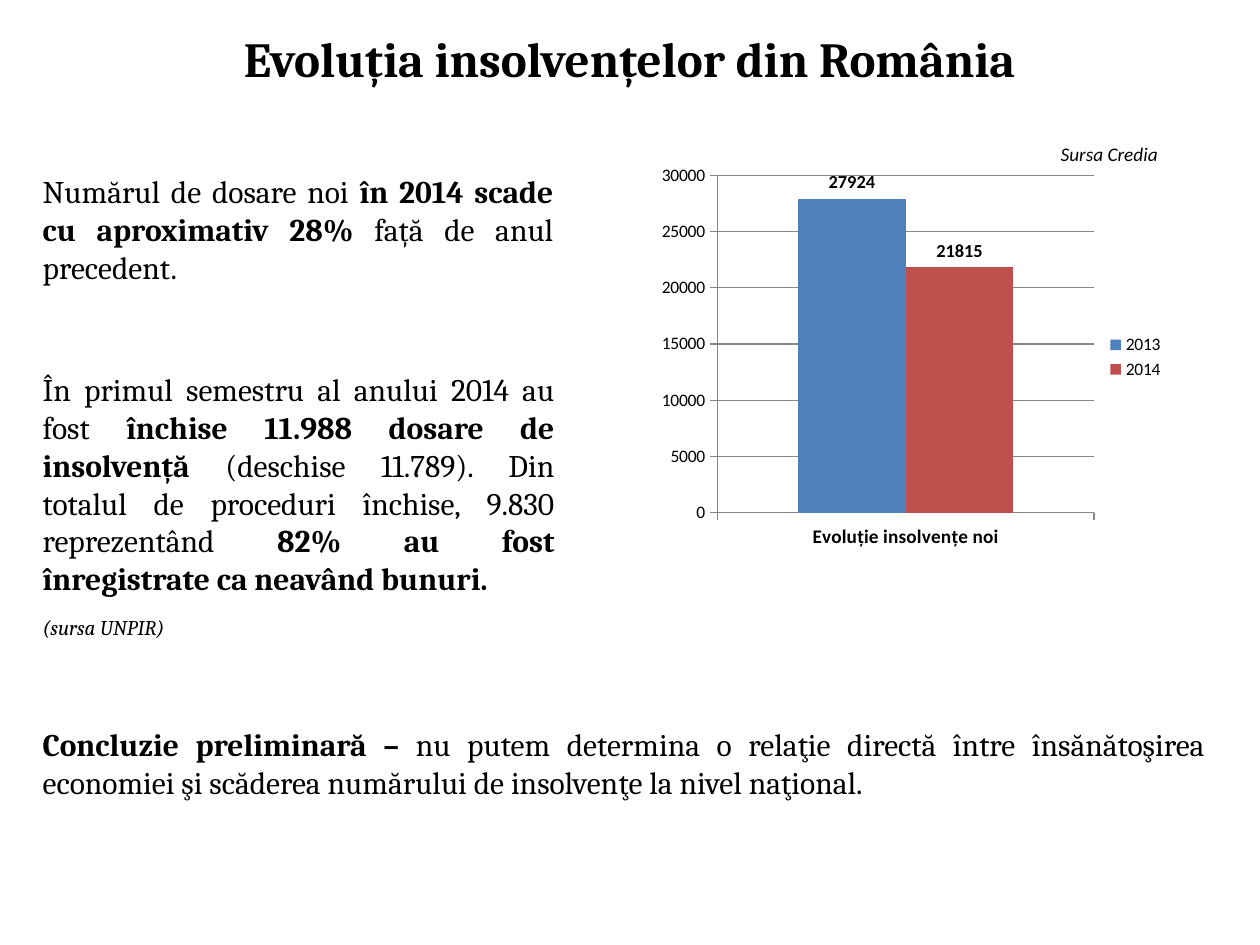
from pptx import Presentation
from pptx.chart.data import CategoryChartData
from pptx.dml.color import RGBColor
from pptx.enum.chart import (XL_CHART_TYPE, XL_LABEL_POSITION,
                             XL_LEGEND_POSITION, XL_TICK_MARK)
from pptx.enum.text import PP_ALIGN
from pptx.util import Pt

BLACK = RGBColor(0, 0, 0)
BLUE = RGBColor(0x4F, 0x81, 0xBD)
RED = RGBColor(0xC0, 0x50, 0x4D)
GRAY = RGBColor(0x86, 0x86, 0x86)
LEFT, MID, RIGHT = PP_ALIGN.JUSTIFY, PP_ALIGN.CENTER, PP_ALIGN.RIGHT
COLUMN = XL_CHART_TYPE.COLUMN_CLUSTERED
ABOVE = XL_LABEL_POSITION.OUTSIDE_END
SIDE = XL_LEGEND_POSITION.RIGHT
OUT = XL_TICK_MARK.OUTSIDE

deck = Presentation()
deck.slide_width, deck.slide_height = Pt(720), Pt(540)
slide = deck.slides.add_slide(deck.slide_layouts[6])


def add_text(frame, text, size=18, font="Cambria", align=LEFT, after=10,
             italic=False, first=True):
    """Write one paragraph; every second part between ** marks is bold."""
    para = frame.paragraphs[0] if first else frame.add_paragraph()
    para.alignment = align
    para.space_after = Pt(after)
    for i, part in enumerate(text.split("**")):
        if part:
            run = para.add_run()
            run.text = part
            run.font.name, run.font.size = font, Pt(size)
            run.font.bold, run.font.italic = i % 2 == 1, italic
            run.font.color.rgb = BLACK


def add_box(x, y, w, h):
    frame = slide.shapes.add_textbox(Pt(x), Pt(y), Pt(w), Pt(h)).text_frame
    frame.word_wrap = True
    return frame


# Title and left column
title = add_box(77.8, 13, 563.8, 41)
add_text(title, "**Evoluția insolvențelor din România**", size=28, align=MID, after=0)

trend = add_box(17.3, 95, 306, 72.7)
add_text(trend, "Numărul de dosare noi **în 2014 scade cu aproximativ 28% **"
         "față de anul precedent. ")

closed = add_box(17.3, 208, 306.7, 162.7)
add_text(closed, "În primul semestru al anului 2014 au fost **închise 11.988 dosare "
         "de insolvență **(deschise 11.789). Din totalul de proceduri închise, "
         "9.830 reprezentând **82% au fost înregistrate ca neavând bunuri. **")
add_text(closed, "(sursa UNPIR)", size=12, italic=True, first=False)

# Chart of new cases
data = CategoryChartData()
data.categories = ["Evoluție insolvențe noi"]
data.add_series("2013", [27924])
data.add_series("2014", [21815])
chart = slide.shapes.add_chart(COLUMN, Pt(372.2), Pt(90), Pt(300.2), Pt(228.2),
                               data).chart
chart.has_title = False
chart.font.name, chart.font.size = "Calibri", Pt(10)
chart.font.color.rgb = BLACK
chart.has_legend = True
chart.legend.position = SIDE
chart.legend.include_in_layout = False

cats, vals = chart.category_axis, chart.value_axis
for axis in (cats, vals):
    axis.major_tick_mark = OUT
    axis.format.line.color.rgb = GRAY
cats.tick_labels.font.size, cats.tick_labels.font.bold = Pt(11), True
vals.minimum_scale, vals.maximum_scale, vals.major_unit = 0, 30000, 5000
vals.major_gridlines.format.line.color.rgb = GRAY

plot = chart.plots[0]
plot.gap_width, plot.overlap = 150, 0
plot.vary_by_categories = False
for series, color in zip(plot.series, (BLUE, RED)):
    series.format.fill.solid()
    series.format.fill.fore_color.rgb = color
    labels = series.data_labels
    labels.show_value = True
    labels.position = ABOVE
    labels.font.size, labels.font.bold = Pt(10.5), True

source = add_box(570.2, 77.8, 98.6, 20.9)
add_text(source, "Sursa Credia", size=11, font="Calibri", align=RIGHT, after=0,
         italic=True)

# Conclusion
ending = add_box(17.3, 411, 678.2, 51)
add_text(ending, "**Concluzie preliminară – **nu putem determina o relaţie directă "
         "între însănătoşirea economiei şi scăderea numărului de insolvenţe "
         "la nivel naţional.")

deck.save("out.pptx")
